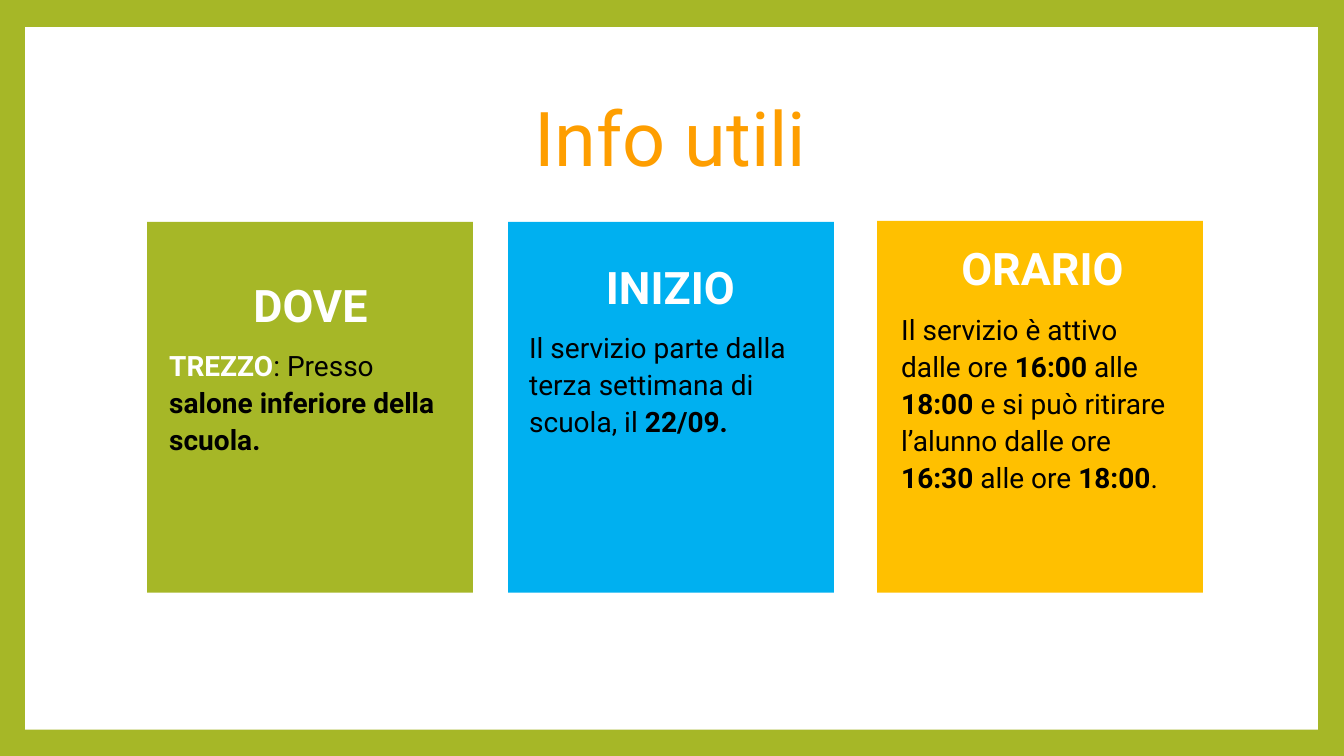
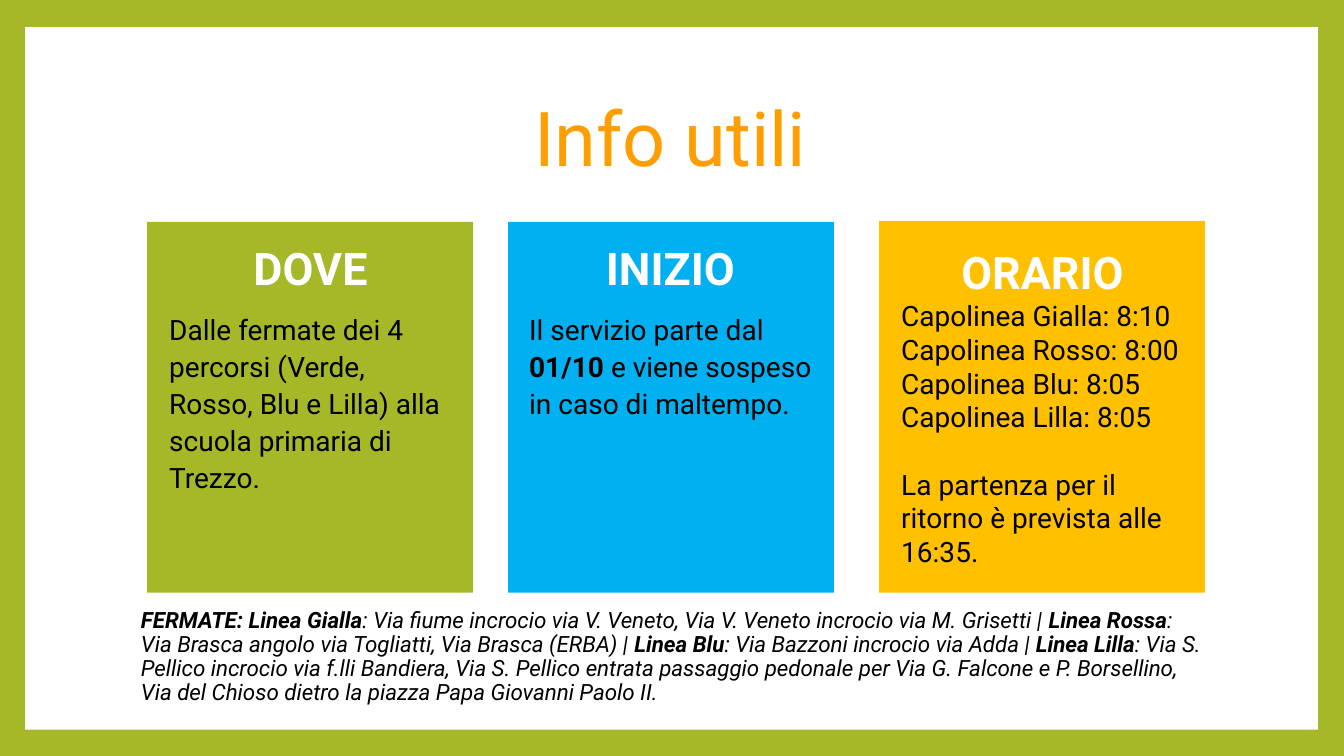
from dataclasses import dataclass

import pptx
import pptx.dml.color
import pptx.enum.shapes
import pptx.enum.text
import pptx.util

Inches = pptx.util.Inches
Pt = pptx.util.Pt
Align = pptx.enum.text.PP_ALIGN
Anchor = pptx.enum.text.MSO_ANCHOR

FONT = "Roboto"
GREEN, BLUE, YELLOW, ORANGE = "A6B727", "00B0F0", "FFC000", "FE9E00"
WHITE, BLACK = "FFFFFF", "000000"
CARD_WIDTH, CARD_BOTTOM = 3.23, 5.88
LABEL_WIDTH = 3


@dataclass
class Span:
    text: str
    bold: bool = False
    color: str = BLACK


@dataclass
class Paragraph:
    spans: list[Span]
    before: float = 10
    spacing: float = 1.1


@dataclass
class Card:
    heading: str
    fill: str
    left: float
    top: float
    text_left: float
    text_top: float
    body: list[Paragraph]


def color_of(value: str) -> pptx.dml.color.RGBColor:
    return pptx.dml.color.RGBColor.from_string(value)


def spans_of(text: str) -> list[Span]:
    """Split text into spans; parts between double asterisks are bold."""
    return [Span(part, index % 2 == 1) for index, part in enumerate(text.split("**")) if part]


def add_panel(shapes, left: float, top: float, width: float, height: float, fill: str) -> None:
    panel = shapes.add_shape(
        pptx.enum.shapes.MSO_SHAPE.RECTANGLE,
        Inches(left), Inches(top), Inches(width), Inches(height),
    )
    panel.shadow.inherit = False
    panel.fill.solid()
    panel.fill.fore_color.rgb = color_of(fill)
    panel.line.fill.background()


def add_text_frame(shapes, left: float, top: float, width: float, height: float):
    box = shapes.add_textbox(Inches(left), Inches(top), Inches(width), Inches(height))
    box.text_frame.word_wrap = True
    return box.text_frame


def write_paragraph(para, content: Paragraph, size: float, align=Align.LEFT, italic: bool = False) -> None:
    para.alignment = align
    para.line_spacing = content.spacing
    para.space_before = Pt(content.before)
    for span in content.spans:
        run = para.add_run()
        run.text = span.text
        run.font.name = FONT
        run.font.size = Pt(size)
        run.font.bold = span.bold
        run.font.italic = italic
        run.font.color.rgb = color_of(span.color)


def add_card(page, card: Card) -> None:
    shapes = page.shapes.add_group_shape().shapes
    add_panel(shapes, card.left, card.top, CARD_WIDTH, CARD_BOTTOM - card.top, card.fill)
    frame = add_text_frame(shapes, card.text_left, card.text_top, LABEL_WIDTH, CARD_BOTTOM - card.text_top)
    heading = Paragraph([Span(card.heading, True, WHITE)])
    write_paragraph(frame.paragraphs[0], heading, 32, Align.CENTER)
    for content in card.body:
        write_paragraph(frame.add_paragraph(), content, 20)


def add_page(deck, title: str, cards: list[Card]):
    """Add a framed page with its title and cards."""
    page = deck.slides.add_slide(deck.slide_layouts[6])
    page.background.fill.solid()
    page.background.fill.fore_color.rgb = color_of(GREEN)
    add_panel(page.shapes, 0.25, 0.27, 12.82, 6.97, WHITE)
    frame = add_text_frame(page.shapes, 1.25, 0.67, 10.8, 1.48)
    frame.vertical_anchor = Anchor.MIDDLE
    content = Paragraph([Span(title, color=ORANGE)], before=0, spacing=0.9)
    write_paragraph(frame.paragraphs[0], content, 54, Align.CENTER)
    for card in cards:
        add_card(page, card)
    return page


def add_stops(page, text: str) -> None:
    frame = add_text_frame(page.shapes, 1.3, 5.99, 10.75, 0.96)
    content = Paragraph(spans_of(text), before=14, spacing=0.9)
    write_paragraph(frame.paragraphs[0], content, 16, italic=True)


def where_card(text_top: float, spans: list[Span]) -> Card:
    return Card("DOVE", GREEN, 1.46, 2.2, 1.58, text_top, [Paragraph(spans)])


def start_card(text_top: float, text: str) -> Card:
    return Card("INIZIO", BLUE, 5.04, 2.2, 5.15, text_top, [Paragraph(spans_of(text))])


def hours_card(left: float, text_top: float, body: list[Paragraph]) -> Card:
    return Card("ORARIO", YELLOW, left, 2.19, 8.84, text_top, body)


AFTER_SCHOOL = [
    where_card(2.65, [
        Span("TREZZO", True, WHITE),
        Span(": Presso "),
        Span("salone inferiore della scuola.", True),
    ]),
    start_card(2.47, "Il servizio parte dalla terza settimana di scuola, il **22/09.**"),
    hours_card(8.7, 2.29, [Paragraph(spans_of(
        "Il servizio è attivo dalle ore **16:00 **alle **18:00 **e si può ritirare "
        "l’alunno dalle ore **16:30** alle ore **18:00**."
    ))]),
]

DEPARTURES = ["Gialla: 8:10", "Rosso: 8:00", "Blu: 8:05", "Lilla: 8:05"]
RETURN_TRIP = "La partenza per il ritorno è prevista alle 16:35."

WALKING_BUS = [
    where_card(2.29, spans_of(
        "Dalle fermate dei 4 percorsi (Verde, Rosso, Blu e Lilla) alla scuola primaria di Trezzo."
    )),
    start_card(2.29, "Il servizio parte dal **01/10 **e viene sospeso in caso di maltempo."),
    hours_card(8.72, 2.33, [
        *(Paragraph([Span(f"Capolinea {departure}")], 0, 1.0) for departure in DEPARTURES),
        Paragraph([Span(RETURN_TRIP)], 24, 1.0),
    ]),
]

STOPS = (
    "**FERMATE: Linea Gialla**: Via fiume incrocio via V. Veneto, Via V. Veneto incrocio "
    "via M. Grisetti | **Linea Rossa**: Via Brasca angolo via Togliatti, Via Brasca (ERBA) | "
    "**Linea Blu**: Via Bazzoni incrocio via Adda | **Linea Lilla**: Via S. Pellico incrocio "
    "via f.lli Bandiera, Via S. Pellico entrata passaggio pedonale per Via G. Falcone e "
    "P. Borsellino, Via del Chioso dietro la piazza Papa Giovanni Paolo II."
)


def main() -> None:
    deck = pptx.Presentation()
    deck.slide_width = Inches(13.33)
    deck.slide_height = Inches(7.5)
    add_page(deck, "Info utili", AFTER_SCHOOL)
    add_stops(add_page(deck, "Info utili", WALKING_BUS), STOPS)
    deck.save("out.pptx")


if __name__ == "__main__":
    main()
